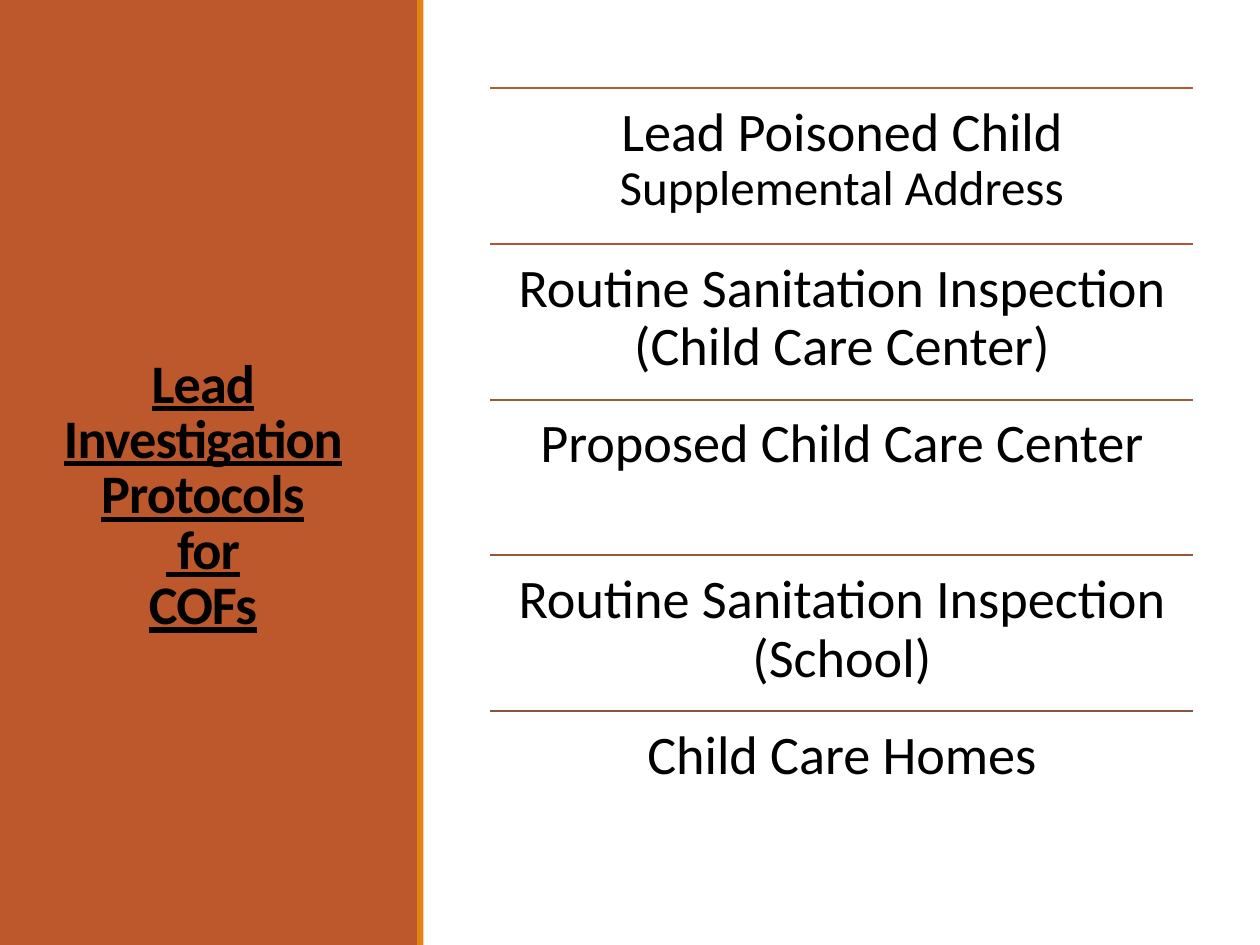
from dataclasses import dataclass

from lxml import etree
from pptx import Presentation
from pptx.dml.color import RGBColor
from pptx.enum.shapes import MSO_CONNECTOR, MSO_SHAPE
from pptx.enum.text import MSO_ANCHOR, PP_ALIGN
from pptx.oxml.ns import qn
from pptx.util import Inches, Pt

RECT = MSO_SHAPE.RECTANGLE
STRAIGHT = MSO_CONNECTOR.STRAIGHT
TOP, MIDDLE = MSO_ANCHOR.TOP, MSO_ANCHOR.MIDDLE
CENTER = PP_ALIGN.CENTER


@dataclass(frozen=True)
class Theme:
    font: str = "Calibri"
    rust: str = "BD582C"
    orange: str = "E48312"
    text: str = "000000"
    rules: tuple = ("BD582C", "AE5832", "A05837", "93573C", "865640")
    size: int = 31
    small: int = 28
    rule_width: float = 1.25


THEME = Theme()
TITLE = "Lead Investigation Protocols\v for\vCOFs"
PROTOCOLS = [
    [("Lead Poisoned Child ", THEME.size), ("Supplemental Address", THEME.small)],
    [("Routine Sanitation Inspection (Child Care Center)", THEME.size)],
    [("Proposed Child Care Center", THEME.size)],
    [("Routine Sanitation Inspection (School)", THEME.size)],
    [("Child Care Homes", THEME.size)],
]


def add_bar(slide, x, y, w, h, color):
    s = slide.shapes.add_shape(RECT, Inches(x), Inches(y), Inches(w), Inches(h))
    s.shadow.inherit = False
    s.fill.solid()
    s.fill.fore_color.rgb = RGBColor.from_string(color)
    s.line.fill.background()


def add_text(slide, x, y, w, h, anchor, spacing):
    tf = slide.shapes.add_textbox(Inches(x), Inches(y), Inches(w), Inches(h)).text_frame
    tf.word_wrap = True
    tf.vertical_anchor = anchor
    p = tf.paragraphs[0]
    p.alignment = CENTER
    p.line_spacing = spacing
    p.font.name = THEME.font
    p.font.size = Pt(THEME.size)
    p.font.color.rgb = RGBColor.from_string(THEME.text)
    return tf, p


def add_rule(slide, x, y, w, color):
    line = slide.shapes.add_connector(STRAIGHT, Inches(x), Inches(y), Inches(x + w), Inches(y))
    line.line.color.rgb = RGBColor.from_string(color)
    line.line.width = Pt(THEME.rule_width)
    etree.SubElement(line._element.spPr, qn("a:effectLst"))


def add_title_panel(slide, x, y, w, h):
    edge = 0.05
    add_bar(slide, x, y, w, h, THEME.rust)
    tf, p = add_text(slide, x, y + 0.57, w - 0.1, 6.31, MIDDLE, 0.85)
    tf.margin_top = Inches(0.49)
    p.text = TITLE
    p.font.bold = True
    p.font.underline = True
    p._p.get_or_add_pPr().get_or_add_defRPr().set("spc", "-50")
    add_bar(slide, x + w - 0.01, y, edge, h, THEME.orange)


def add_protocol_list(slide, x, y, w, h):
    row_h = h / len(PROTOCOLS)
    for i, (runs, color) in enumerate(zip(PROTOCOLS, THEME.rules)):
        top = y + i * row_h
        add_rule(slide, x, top, w, color)
        tf, p = add_text(slide, x, top, w, row_h, TOP, 0.9)
        tf.margin_left = tf.margin_right = tf.margin_top = tf.margin_bottom = Inches(0.13)
        for text, size in runs:
            r = p.add_run()
            r.text = text
            if size != THEME.size:
                r.font.size = Pt(size)


def main():
    prs = Presentation()
    prs.slide_width, prs.slide_height = Inches(10), Inches(7.5)
    slide = prs.slides.add_slide(prs.slide_layouts[6])
    add_title_panel(slide, 0, 0, 3.32, 7.5)
    add_protocol_list(slide, 3.89, 0.7, 5.58, 6.18)
    prs.save("out.pptx")


if __name__ == "__main__":
    main()
